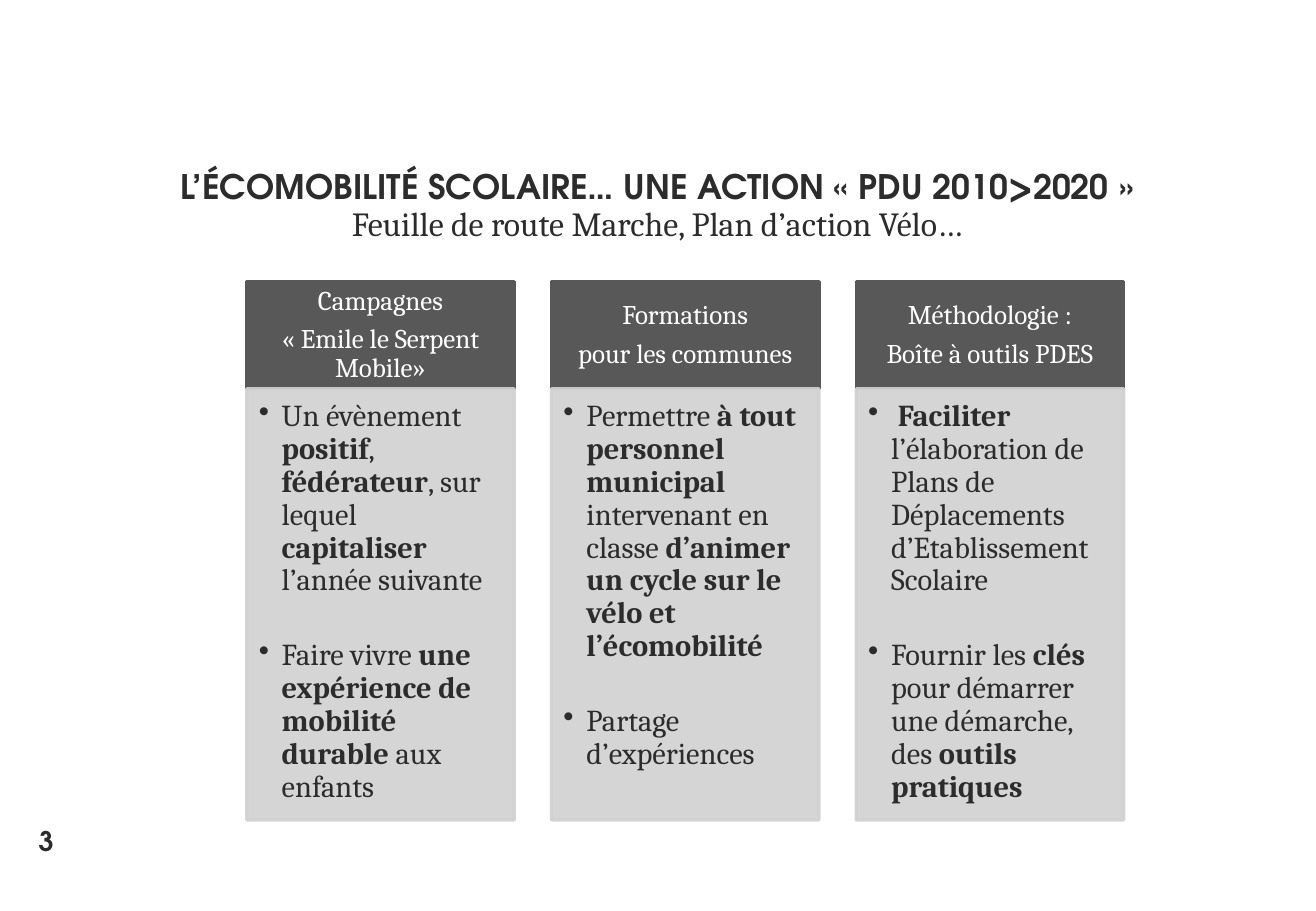
from dataclasses import dataclass

from lxml import etree
from pptx import Presentation
from pptx import util as u
from pptx.dml.color import RGBColor
from pptx.enum import shapes, text
from pptx.oxml import ns

TITLE = "L’ÉCOMOBILITÉ SCOLAIRE… UNE ACTION «\u00a0PDU 2010>2020\u00a0»"
SUBTITLE = "Feuille de route Marche, Plan d’action Vélo…"
PAGE_NUMBER = "3"

# Each column: heading lines, then bullets; **...** marks bold words.
COLUMNS = [
    (["Campagnes", "«\u00a0Emile\u00a0le Serpent Mobile»"],
     ["Un évènement **positif**, **fédérateur**, sur lequel **capitaliser** l’année suivante",
      "Faire vivre **une expérience de mobilité durable **aux enfants"]),
    (["Formations", "pour les communes"],
     ["Permettre **à tout personnel municipal **intervenant en classe "
      "**d’animer un cycle sur le vélo et l’écomobilité**",
      "Partage d’expériences"]),
    (["Méthodologie :", "Boîte à outils PDES"],
     ["** Faciliter** l’élaboration de Plans de Déplacements d’Etablissement Scolaire",
      "Fournir les **clés **pour démarrer une démarche, des **outils pratiques**"]),
]


@dataclass(frozen=True)
class Theme:
    ink: RGBColor = RGBColor(0x2C, 0x2C, 0x2C)
    white: RGBColor = RGBColor(0xFF, 0xFF, 0xFF)
    heading_fill: RGBColor = RGBColor(0x58, 0x58, 0x58)
    panel_fill: RGBColor = RGBColor(0xD1, 0xD1, 0xD1)
    display_font: str = "TeX Gyre Adventor"
    text_font: str = "Cambria"
    title_size: u.Pt = u.Pt(20)
    panel_size: u.Pt = u.Pt(18)
    small_size: u.Pt = u.Pt(16)


THEME = Theme()
COLUMN_LEFT, COLUMN_PITCH, COLUMN_WIDTH = u.Cm(5.16), u.Cm(6.37), u.Cm(5.59)
HEADING_TOP, HEADING_HEIGHT, PANEL_HEIGHT = u.Cm(5.89), u.Cm(2.24), u.Cm(9.02)
BULLET_INDENT = u.Cm(0.48)


def place(shape, left, top, width, height):
    shape.left, shape.top, shape.width, shape.height = left, top, width, height


def set_margins(frame, left, top, right, bottom):
    frame.margin_left, frame.margin_top = u.Cm(left), u.Cm(top)
    frame.margin_right, frame.margin_bottom = u.Cm(right), u.Cm(bottom)


def style(paragraph, font_name, size, color, bold=False):
    font = paragraph.font
    font.name, font.size, font.bold = font_name, size, bold
    font.color.rgb = color


def set_bullet(paragraph, character=None):
    """Give a hanging bullet, or no bullet and no indent without a character."""
    properties = paragraph._p.get_or_add_pPr()
    indent = BULLET_INDENT if character else 0
    properties.set("marL", str(indent))
    properties.set("indent", str(-indent))
    tag = "a:buChar" if character else "a:buNone"
    bullet = etree.SubElement(properties, ns.qn(tag))
    if character:
        bullet.set("char", character)


def add_marked_runs(paragraph, marked):
    for position, part in enumerate(marked.split("**")):
        if part:
            run = paragraph.add_run()
            run.text = part
            if position % 2:
                run.font.bold = True


def fill_placeholder(shape, content, font_name, bold):
    frame = shape.text_frame
    frame.auto_size = text.MSO_AUTO_SIZE.NONE
    frame.text = content
    paragraph = frame.paragraphs[0]
    paragraph.alignment = text.PP_ALIGN.CENTER
    paragraph.space_before = u.Pt(0)
    set_bullet(paragraph)
    style(paragraph, font_name, THEME.title_size, THEME.ink, bold)
    return frame


def add_block(slide, left, top, height, color, opacity=100):
    block = slide.shapes.add_shape(
        shapes.MSO_SHAPE.RECTANGLE, left, top, COLUMN_WIDTH, height)
    block.shadow.inherit = False
    block.line.width = u.Pt(2)
    for fill in (block.fill, block.line.fill):
        fill.solid()
        fill.fore_color.rgb = color
    if opacity < 100:
        for color_element in block._element.spPr.iter(ns.qn("a:srgbClr")):
            alpha = etree.SubElement(color_element, ns.qn("a:alpha"))
            alpha.set("val", str(opacity * 1000))
    block.text_frame.word_wrap = True
    return block.text_frame


def add_paragraphs(frame, lines, alignment, gap, size, color, bullet=None):
    for index, line in enumerate(lines):
        paragraph = frame.add_paragraph() if index else frame.paragraphs[0]
        paragraph.alignment = alignment
        paragraph.line_spacing = 0.9
        paragraph.space_before = gap if index else u.Pt(0)
        set_bullet(paragraph, bullet)
        style(paragraph, THEME.text_font, size, color)
        add_marked_runs(paragraph, line)


def add_column(slide, index, heading, bullets):
    left = COLUMN_LEFT + index * COLUMN_PITCH
    frame = add_block(slide, left, HEADING_TOP, HEADING_HEIGHT, THEME.heading_fill)
    set_margins(frame, 0.3, 0.18, 0.3, 0.18)
    frame.vertical_anchor = text.MSO_ANCHOR.MIDDLE
    add_paragraphs(frame, heading, text.PP_ALIGN.CENTER, u.Pt(5.6),
                   THEME.small_size, THEME.white)

    frame = add_block(slide, left, HEADING_TOP + HEADING_HEIGHT, PANEL_HEIGHT,
                      THEME.panel_fill, opacity=90)
    set_margins(frame, 0.25, 0.25, 0.36, 0.41)
    frame.vertical_anchor = text.MSO_ANCHOR.TOP
    add_paragraphs(frame, bullets, text.PP_ALIGN.LEFT, u.Pt(25),
                   THEME.panel_size, THEME.ink, bullet="•")


def main():
    presentation = Presentation()
    presentation.slide_width, presentation.slide_height = u.Cm(27.51), u.Cm(19.05)
    slide = presentation.slides.add_slide(presentation.slide_layouts[1])

    title, subtitle = slide.shapes.title, slide.placeholders[1]
    place(title, u.Cm(1.35), u.Cm(2.72), u.Cm(24.79), u.Cm(1.6))
    frame = fill_placeholder(title, TITLE, THEME.display_font, True)
    set_margins(frame, 0.25, 0.13, 0.25, 0)
    frame.vertical_anchor = text.MSO_ANCHOR.BOTTOM
    frame.paragraphs[0].line_spacing = u.Pt(36)

    place(subtitle, u.Cm(1.35), u.Cm(4.11), u.Cm(24.79), u.Cm(1.8))
    fill_placeholder(subtitle, SUBTITLE, THEME.text_font, False)

    number = slide.shapes.add_textbox(u.Cm(0.56), u.Cm(17.12), u.Cm(6.43), u.Cm(1.02))
    number.text_frame.word_wrap = True
    number.text_frame.text = PAGE_NUMBER
    style(number.text_frame.paragraphs[0], THEME.display_font,
          THEME.small_size, THEME.ink, True)

    for index, (heading, bullets) in enumerate(COLUMNS):
        add_column(slide, index, heading, bullets)

    presentation.save("out.pptx")


if __name__ == "__main__":
    main()
